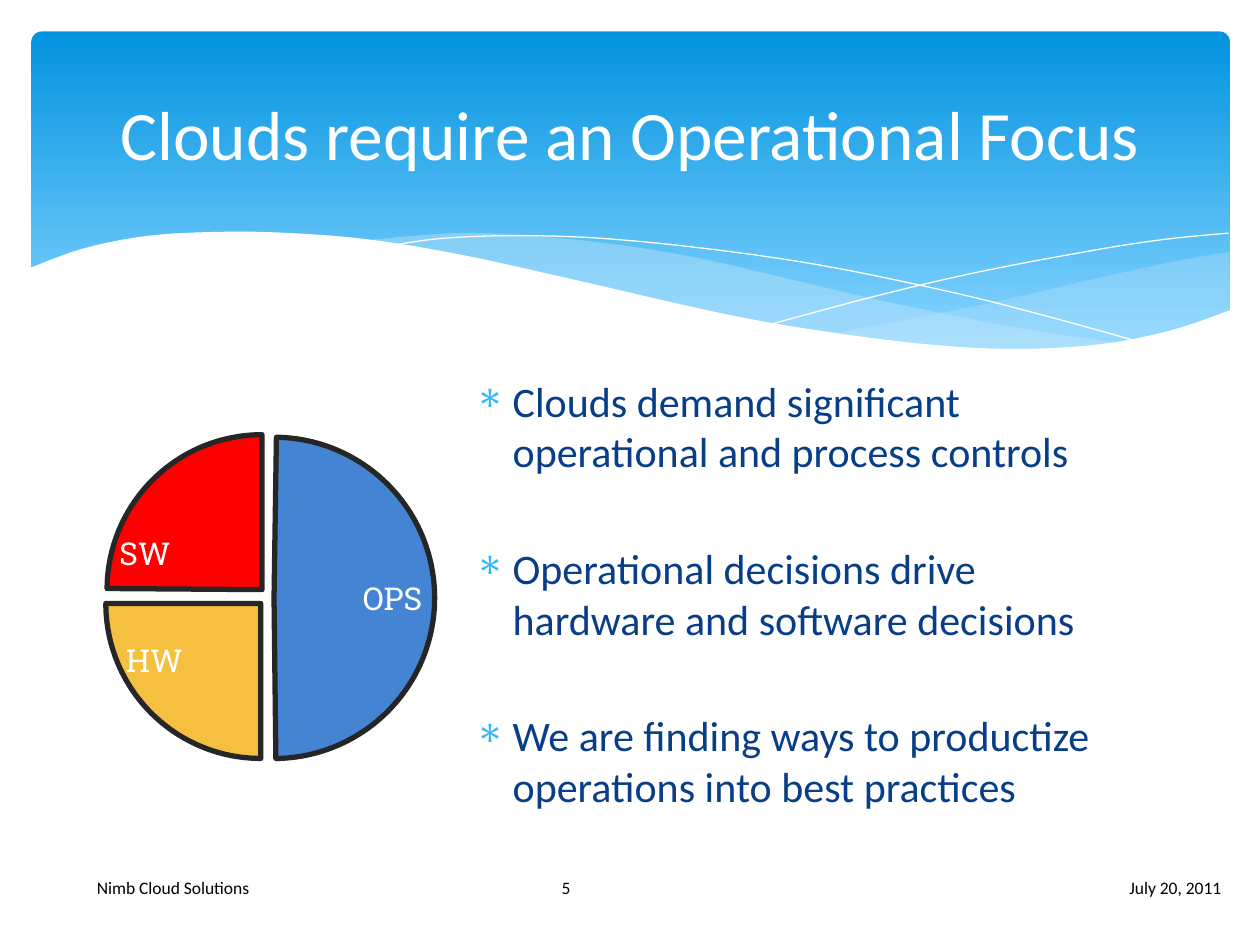
from dataclasses import dataclass

from lxml import etree
from pptx import Presentation
from pptx import util as u
from pptx.dml.color import RGBColor
from pptx.enum import shapes, text
from pptx.oxml.ns import qn

HUES = {
    "top": "0293E0", "low": "83D3FE", "mist": "C6E7FC", "white": "FFFFFF",
    "navy": "073E87", "star": "31B6FD", "black": "000000", "edge": "262626",
    "red": "FF0000", "gold": "F5C040", "blue": "4584D3",
}
Knot = tuple[float, float]
LEFT, MID, RIGHT = text.PP_ALIGN.LEFT, text.PP_ALIGN.CENTER, text.PP_ALIGN.RIGHT


@dataclass
class Band:
    curves: list[list[Knot]]
    fill: str | None = None
    alpha: int = 100


@dataclass
class Label:
    words: str
    box: tuple[float, float, float, float]
    size: float = 10
    hue: str = "black"
    align: text.PP_ALIGN = LEFT


@dataclass
class Slice:
    words: str
    left: float
    top: float
    size: float
    start: float
    end: float
    hue: str
    align: text.PP_ALIGN = LEFT
    pads: tuple[float, float, float, float] = (0.1, 0.05, 0.1, 0.05)


BANDS = [
    Band([[(9.76, 2), (9.35, 2.07), (8.61, 2.23), (7.79, 2.42), (6.61, 2.65)],
          [(6.61, 2.65), (7.19, 2.72), (7.81, 2.77), (8.35, 2.77), (8.89, 2.72),
           (9.35, 2.62), (9.76, 2.47)]], "mist", 29),
    Band([[(8.93, 2.73), (8.07, 2.6), (7.06, 2.4), (6.29, 2.22), (5.55, 2.05),
           (4.89, 1.94), (4.2, 1.87), (3.61, 1.85), (2.86, 1.91)],
          [(2.86, 1.91), (3.62, 2.03), (4.49, 2.22), (5.3, 2.4), (6.18, 2.58),
           (6.95, 2.7), (7.61, 2.77), (8.28, 2.78), (8.93, 2.73)]], "mist", 40),
    Band([[(3.09, 1.95), (3.53, 1.89), (4.16, 1.87), (4.89, 1.9), (5.82, 2),
           (6.65, 2.13), (7.6, 2.33), (8.31, 2.51), (9.07, 2.72)]]),
    Band([[(6.13, 2.57), (6.95, 2.35), (7.76, 2.16), (8.66, 1.99), (9.24, 1.9),
           (9.75, 1.85)]]),
    Band([[(9.77, 2.46), (9.3, 2.62), (8.75, 2.73), (8.09, 2.77), (7.44, 2.74),
           (6.68, 2.65), (5.79, 2.5), (4.47, 2.2), (3.65, 2.02), (2.92, 1.9),
           (2.3, 1.85), (1.77, 1.84), (1.19, 1.87), (0.67, 1.97), (0.23, 2.13)],
          [(0.23, 3.29), (9.77, 3.29)]], "white"),
]
LABELS = [
    Label("July 20, 2011", (5.65, 6.84, 4.14, 0.4), align=RIGHT),
    Label("Nimb Cloud Solutions", (0.67, 6.84, 3.68, 0.4)),
    Label("5", (4.36, 6.84, 1.27, 0.4)),
    Label("Clouds require an Operational Focus", (0.5, 0.37, 9, 1.37), 39.6, "white", MID),
]
SLICES = [
    Slice("HW", 0.84, 3.56, 2.46, 54, 108, "gold", pads=(0.16, 0.95, 0.1, 0.05)),
    Slice("SW", 0.85, 3.45, 2.46, 108.24, 162, "red", pads=(0.1, 0.05, 0.1, 0.63)),
    Slice("OPS", 0.9, 3.47, 2.55, 162.51, 53.61, "blue", RIGHT),
]
POINTS = [
    "Clouds demand significant operational and process controls",
    "Operational decisions drive hardware and software decisions",
    "We are finding ways to productize operations into best practices",
]


def tint(name: str) -> RGBColor:
    return RGBColor.from_string(HUES[name])


def paint(shape, name: str) -> None:
    shape.fill.solid()
    shape.fill.fore_color.rgb = tint(name)


def style(para, size: float, hue: str, face: str = "Calibri") -> None:
    para.font.size = u.Pt(size)
    para.font.name = face
    para.font.color.rgb = tint(hue)


def bend(knots: list[Knot], steps: int = 6) -> list[Knot]:
    pad = [knots[0], *knots, knots[-1]]
    out = [knots[0]]
    for a, b, c, d in zip(pad, pad[1:], pad[2:], pad[3:]):
        for i in range(1, steps + 1):
            t = i / steps
            out.append(tuple(
                (2 * q + (r - p) * t + (2 * p - 5 * q + 4 * r - s) * t ** 2
                 + (3 * q - p - 3 * r + s) * t ** 3) / 2
                for p, q, r, s in zip(a, b, c, d)))
    return out


def draw_band(tree, band: Band) -> None:
    dots = [(u.Inches(x), u.Inches(y)) for c in band.curves for x, y in bend(c)]
    pen = tree.build_freeform(*dots[0])
    pen.add_line_segments(dots[1:], close=band.fill is not None)
    shape = pen.convert_to_shape()
    shape.shadow.inherit = False
    if band.fill is None:
        shape.fill.background()
        shape.line.color.rgb = tint("white")
        shape.line.width = u.Pt(0)
        return
    paint(shape, band.fill)
    shape.line.fill.background()
    if band.alpha < 100:
        color = shape.fill._xPr.find(qn("a:solidFill"))[0]
        etree.SubElement(color, qn("a:alpha")).set("val", str(band.alpha * 1000))


def draw_sky(tree) -> None:
    sky = tree.add_shape(shapes.MSO_SHAPE.ROUNDED_RECTANGLE, u.Inches(0.25),
                         u.Inches(0.25), u.Inches(9.51), u.Inches(2.7))
    sky.adjustments[0] = 0.03
    sky.shadow.inherit = False
    sky.line.fill.background()
    sky.fill.gradient()
    sky.fill.gradient_angle = 270
    for stop, name, place in zip(sky.fill.gradient_stops, ("top", "low"), (0, 0.9)):
        stop.color.rgb = tint(name)
        stop.position = place


def draw_label(tree, label: Label) -> None:
    frame = tree.add_textbox(*map(u.Inches, label.box)).text_frame
    frame.word_wrap = True
    frame.vertical_anchor = text.MSO_ANCHOR.MIDDLE
    para = frame.paragraphs[0]
    para.text = label.words
    para.alignment = label.align
    style(para, label.size, label.hue)


def draw_slice(tree, part: Slice) -> None:
    box = (part.left, part.top, part.size, part.size)
    shape = tree.add_shape(shapes.MSO_SHAPE.PIE, *map(u.Inches, box))
    shape.adjustments[0], shape.adjustments[1] = part.start, part.end
    shape.shadow.inherit = False
    paint(shape, part.hue)
    shape.line.color.rgb = tint("edge")
    shape.line.width = u.Pt(3)
    frame = shape.text_frame
    frame.vertical_anchor = text.MSO_ANCHOR.MIDDLE
    (frame.margin_left, frame.margin_top,
     frame.margin_right, frame.margin_bottom) = map(u.Inches, part.pads)
    para = frame.paragraphs[0]
    para.text = part.words
    para.alignment = part.align
    style(para, 18, "white", "Roboto Slab")


def draw_list(tree, points: list[str]) -> None:
    box = (3.67, 2.93, 5.38, 3.77)
    frame = tree.add_textbox(*map(u.Inches, box)).text_frame
    frame.word_wrap = True
    for i, words in enumerate(points):
        para = frame.add_paragraph() if i else frame.paragraphs[0]
        para.text = words
        para.space_before = u.Pt(38 if i else 0)
        props = para._p.get_or_add_pPr()
        props.set("marL", str(u.Inches(0.3)))
        props.set("indent", str(u.Inches(-0.3)))
        color = etree.SubElement(props, qn("a:buClr"))
        etree.SubElement(color, qn("a:srgbClr")).set("val", HUES["star"])
        etree.SubElement(props, qn("a:buChar")).set("char", "∗")
        style(para, 24, "navy")


def main() -> None:
    deck = Presentation()
    deck.slide_width, deck.slide_height = u.Inches(10), u.Inches(7.5)
    tree = deck.slides.add_slide(deck.slide_layouts[6]).shapes
    draw_sky(tree)
    for band in BANDS:
        draw_band(tree, band)
    draw_list(tree, POINTS)
    for label in LABELS:
        draw_label(tree, label)
    for part in SLICES:
        draw_slice(tree, part)
    deck.save("out.pptx")


if __name__ == "__main__":
    main()
